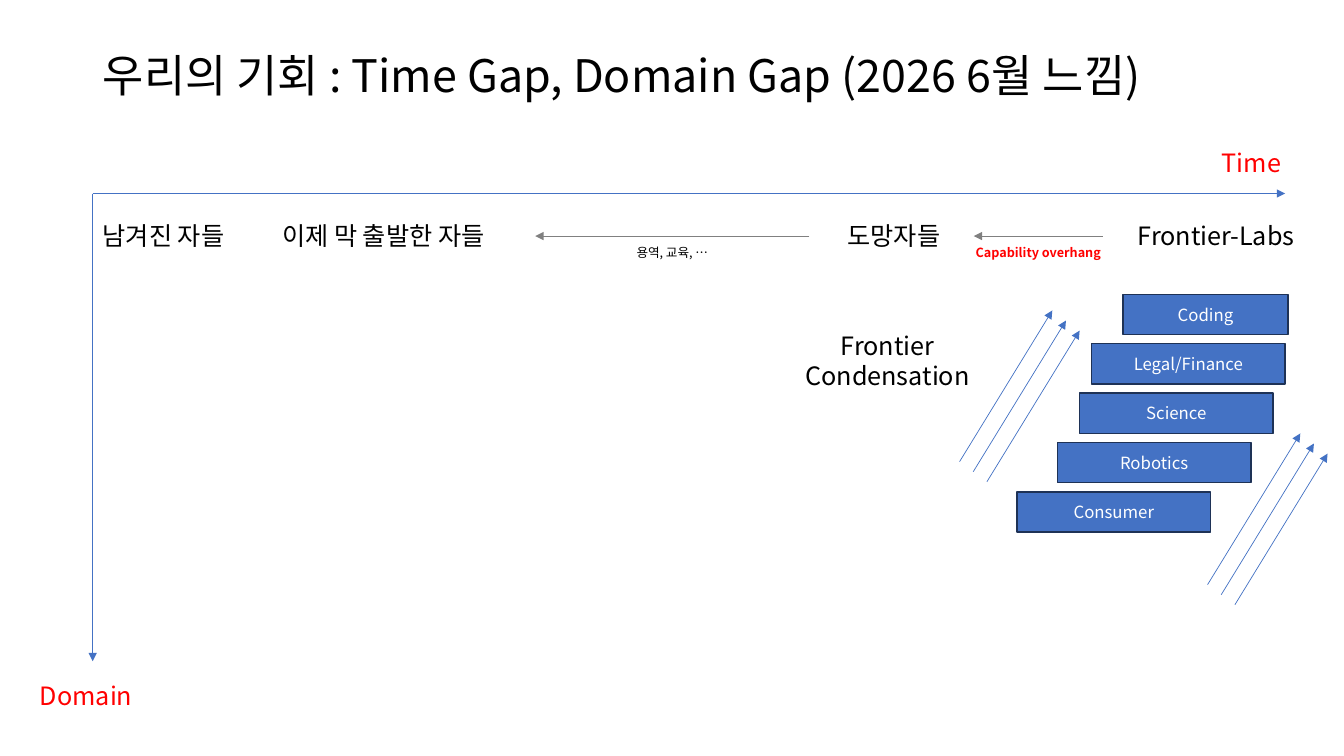
import pptx
import pptx.util
import pptx.dml.color
import pptx.enum.shapes
import pptx.enum.text
import pptx.oxml
import pptx.oxml.ns
from lxml import etree

Pt = pptx.util.Pt
RGBColor = pptx.dml.color.RGBColor
Align = pptx.enum.text.PP_ALIGN
Anchor = pptx.enum.text.MSO_ANCHOR
AutoSize = pptx.enum.text.MSO_AUTO_SIZE
qn = pptx.oxml.ns.qn

FONT = "Noto Sans CJK KR"
BLACK = RGBColor(0x00, 0x00, 0x00)
WHITE = RGBColor(0xFF, 0xFF, 0xFF)
RED = RGBColor(0xFF, 0x00, 0x00)
GRAY = RGBColor(0x80, 0x80, 0x80)
BLUE = RGBColor(0x44, 0x72, 0xC4)
NAVY = RGBColor(0x1E, 0x32, 0x56)

TITLE = "우리의 기회 : Time Gap, Domain Gap (2026 6월 느낌)"
TITLE_BOX = (66.24, 28.8, 828, 53.28)

# name: lines, (left, top, width, height), size, color, alignment, bold
LABELS = {
    "time": (["Time"], (852.48, 101.52, 82.8, 29.08), 18, RED, Align.CENTER, False),
    "domain": (["Domain"], (20.16, 482.4, 82.8, 29.08), 18, RED, Align.CENTER, False),
    "labs": (["Frontier-Labs"], (787.68, 154.08, 162, 29.08), 18, BLACK, Align.CENTER, False),
    "runaways": (["도망자들"], (598.32, 154.08, 97.2, 29.08), 18, BLACK, Align.LEFT, False),
    "starters": (["이제 막 출발한 자들"], (194.4, 154.08, 187.92, 29.08), 18, BLACK, Align.LEFT, False),
    "left_behind": (["남겨진 자들"], (66.24, 154.08, 187.92, 29.08), 18, BLACK, Align.LEFT, False),
    "overhang": (["Capability overhang"], (682.56, 171.36, 118.08, 18.18), 9, RED, Align.CENTER, True),
    "services": (["용역, 교육, …"], (421.2, 171.36, 118.08, 18.18), 9, BLACK, Align.CENTER, False),
    "condensation": (["Frontier", "Condensation"], (552.24, 232.56, 163.44, 50.9), 18, BLACK, Align.CENTER, False),
}

DOMAINS = [
    ("Coding", 802.08, 118.08),
    ("Legal/Finance", 779.76, 138.24),
    ("Science", 771.12, 138.24),
    ("Robotics", 755.28, 138.24),
    ("Consumer", 726.48, 138.24),
]
DOMAIN_TOP, DOMAIN_STEP, DOMAIN_HEIGHT = 210.24, 35.28, 28.8

ORIGIN = (66.24, 138.24)
AXIS_ENDS = [(918, 138.24), (66.24, 472.32)]

TREND_STARTS = [(685.44, 329.76), (862.56, 417.6)]
TREND_RUN, TREND_RISE = 66.24, 108
TREND_COUNT, TREND_SHIFT = 3, (9.75, 7.2)


def write(frame, lines, size, color, align, bold=False):
    frame.word_wrap = True
    frame.text = "\n".join(lines)
    for para in frame.paragraphs:
        para.alignment = align
        font = para.font
        font.name, font.size, font.bold = FONT, Pt(size), bold
        font.color.rgb = color
        defaults = para._p.get_or_add_pPr().get_or_add_defRPr()
        etree.SubElement(defaults, qn("a:ea")).set("typeface", FONT)


def add_label(page, lines, place, size, color, align, bold):
    box = page.shapes.add_textbox(*map(Pt, place))
    write(box.text_frame, lines, size, color, align, bold)
    box.text_frame.auto_size = AutoSize.SHAPE_TO_FIT_TEXT
    return box


def add_arrow(page, start, end, color=BLUE):
    arrow = page.shapes.add_connector(
        pptx.enum.shapes.MSO_CONNECTOR.STRAIGHT, *map(Pt, (*start, *end)))
    arrow.line.color.rgb = color
    arrow.line.width = Pt(0.5)
    line = arrow.line._get_or_add_ln()
    etree.SubElement(line, qn("a:tailEnd")).set("type", "triangle")
    etree.SubElement(arrow._element.spPr, qn("a:effectLst"))
    return arrow


def add_domain(page, name, left, top, width):
    box = page.shapes.add_shape(
        pptx.enum.shapes.MSO_SHAPE.RECTANGLE, *map(Pt, (left, top, width, DOMAIN_HEIGHT)))
    box.shadow.inherit = False
    box.fill.solid()
    box.fill.fore_color.rgb = BLUE
    box.line.color.rgb = NAVY
    box.line.width = Pt(1)
    box.text_frame.vertical_anchor = Anchor.MIDDLE
    write(box.text_frame, [name], 12, WHITE, Align.CENTER)


def main():
    deck = pptx.Presentation()
    deck.slide_width, deck.slide_height = Pt(960), Pt(540)
    page = deck.slides.add_slide(deck.slide_layouts[5])

    title = page.shapes.title
    title.left, title.top, title.width, title.height = map(Pt, TITLE_BOX)
    write(title.text_frame, [TITLE], 32, BLACK, Align.LEFT)
    title.text_frame.vertical_anchor = Anchor.MIDDLE
    title.text_frame.auto_size = AutoSize.NONE
    title.text_frame.paragraphs[0].line_spacing = 0.9

    for end in AXIS_ENDS:
        add_arrow(page, ORIGIN, end)

    boxes = {name: add_label(page, *label) for name, label in LABELS.items()}

    for row, (name, left, width) in enumerate(DOMAINS):
        add_domain(page, name, left, DOMAIN_TOP + row * DOMAIN_STEP, width)

    overhang = add_arrow(page, (787.68, 168.62), (695.52, 168.62), GRAY)
    overhang.begin_connect(boxes["labs"], 1)
    overhang.end_connect(boxes["runaways"], 3)
    services = add_arrow(page, (578.16, 168.62), (382.32, 168.62), GRAY)
    services.end_connect(boxes["starters"], 3)

    for left, bottom in TREND_STARTS:
        for index in range(TREND_COUNT):
            x = left + index * TREND_SHIFT[0]
            y = bottom + index * TREND_SHIFT[1]
            add_arrow(page, (x, y), (x + TREND_RUN, y - TREND_RISE))

    deck.save("out.pptx")


if __name__ == "__main__":
    main()
